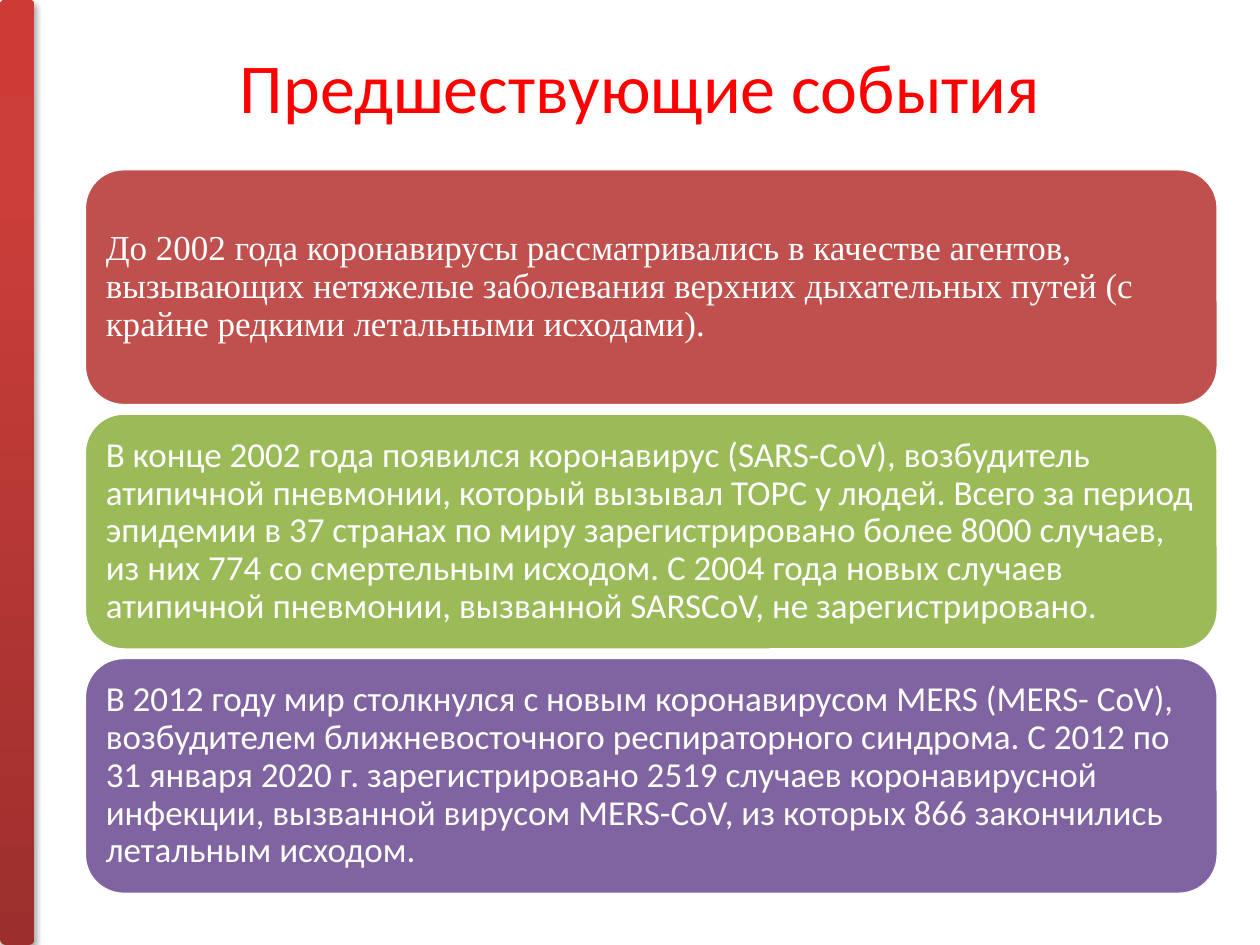
from dataclasses import dataclass

from lxml.etree import SubElement
from pptx import Presentation
from pptx.dml.color import RGBColor as RGB
from pptx.enum.shapes import MSO_SHAPE as SHAPE
from pptx.enum.text import MSO_ANCHOR as ANCHOR, PP_ALIGN as ALIGN
from pptx.oxml import parse_xml
from pptx.oxml.ns import nsdecls, qn
from pptx.util import Cm, Pt


@dataclass(frozen=True)
class Theme:
    """Colours, fonts and type sizes of the slide."""
    title: str = "FF0000"
    text: str = "FFFFFF"
    shadow: str = "000000"
    bar: tuple = ((0, "9C2F2D"), (80, "CB3E3A"), (100, "CE3B37"))
    cards: tuple = ("C0504D", "9BBB59", "8064A2")
    sans: str = "Calibri"
    serif: str = "Times New Roman"
    title_size: int = 40
    card_size: int = 20


THEME = Theme()
EVENTS = (
    (THEME.serif, "До 2002 года коронавирусы рассматривались в качестве агентов, "
     "вызывающих нетяжелые заболевания верхних дыхательных путей "
     "(с крайне редкими летальными исходами)."),
    (THEME.sans, "В конце 2002 года появился коронавирус (SARS-CoV), возбудитель "
     "атипичной пневмонии, который вызывал ТОРС у людей. Всего за период эпидемии "
     "в 37 странах по миру зарегистрировано более 8000 случаев, из них 774 со "
     "смертельным исходом. С 2004 года новых случаев атипичной пневмонии, "
     "вызванной SARSCoV, не зарегистрировано."),
    (THEME.sans, "В 2012 году мир столкнулся с новым коронавирусом MERS (MERS- CoV), "
     "возбудителем ближневосточного респираторного синдрома. С 2012 по 31 января "
     "2020 г. зарегистрировано 2519 случаев коронавирусной инфекции, вызванной "
     "вирусом MERS-CoV, из которых 866 закончились летальным исходом."),
)


def add_run(p, text, font, size, color):
    """Append a formatted run to a paragraph."""
    r = p.add_run()
    r.text = text
    r.font.name = font
    r.font.size = Pt(size)
    r.font.color.rgb = RGB.from_string(color)


def fill_title(s, left, top, width, height):
    """Place and write the slide title."""
    sp = s.shapes.title
    sp.left, sp.top, sp.width, sp.height = left, top, width, height
    tf = sp.text_frame
    tf.vertical_anchor = ANCHOR.MIDDLE
    p = tf.paragraphs[0]
    p.alignment = ALIGN.CENTER
    add_run(p, "Предшествующие события ", THEME.sans, THEME.title_size, THEME.title)


def add_side_bar(s, left, top, width, height):
    """Draw the shaded bar with its gradient and soft shadow."""
    sp = s.shapes.add_shape(SHAPE.ROUNDED_RECTANGLE, left, top, width, height)
    sp.line.fill.background()
    sp.shadow.inherit = False
    stops = "".join(
        f'<a:gs pos="{pos * 1000}"><a:srgbClr val="{color}"/></a:gs>'
        for pos, color in THEME.bar)
    props = sp.element.spPr
    props.find(qn("a:prstGeom")).addnext(parse_xml(
        f'<a:gradFill {nsdecls("a")} rotWithShape="1"><a:gsLst>{stops}</a:gsLst>'
        '<a:lin ang="16200000" scaled="0"/></a:gradFill>'))
    shadow = SubElement(props.find(qn("a:effectLst")), qn("a:outerShdw"),
                        blurRad=str(Pt(3.1)), dist=str(Pt(1.8)),
                        dir="5400000", rotWithShape="0")
    color = SubElement(shadow, qn("a:srgbClr"), val=THEME.shadow)
    SubElement(color, qn("a:alpha"), val="35000")


def add_card(s, left, top, width, height, fill, font, text):
    """Draw one rounded card with its paragraph."""
    sp = s.shapes.add_shape(SHAPE.ROUNDED_RECTANGLE, left, top, width, height)
    sp.shadow.inherit = False
    sp.fill.solid()
    sp.fill.fore_color.rgb = RGB.from_string(fill)
    sp.line.color.rgb = RGB.from_string(THEME.text)
    sp.line.width = Pt(2)
    tf = sp.text_frame
    tf.word_wrap = True
    tf.vertical_anchor = ANCHOR.MIDDLE
    tf.margin_left = tf.margin_right = tf.margin_top = tf.margin_bottom = Cm(0.2)
    p = tf.paragraphs[0]
    p.alignment = ALIGN.LEFT
    p.line_spacing = 0.9
    add_run(p, text, font, THEME.card_size, THEME.text)


def add_cards(s, left, top, width, height):
    """Stack the event cards in equal rows."""
    gap = Cm(0.15)
    row = (height - gap * (len(EVENTS) - 1)) // len(EVENTS)
    for i, (fill, (font, text)) in enumerate(zip(THEME.cards, EVENTS)):
        add_card(s, left, top + i * (row + gap), width, row, fill, font, text)


def main():
    """Build and save the presentation."""
    prs = Presentation()
    prs.slide_width, prs.slide_height = Cm(25.4), Cm(19.05)
    s = prs.slides.add_slide(prs.slide_layouts[5])
    fill_title(s, Cm(1.63), Cm(0.13), Cm(22.86), Cm(3.18))
    add_side_bar(s, 0, 0, Cm(0.7), prs.slide_height)
    add_cards(s, Cm(1.7), Cm(3.4), Cm(22.86), Cm(14.63))
    prs.save("out.pptx")


if __name__ == "__main__":
    main()
